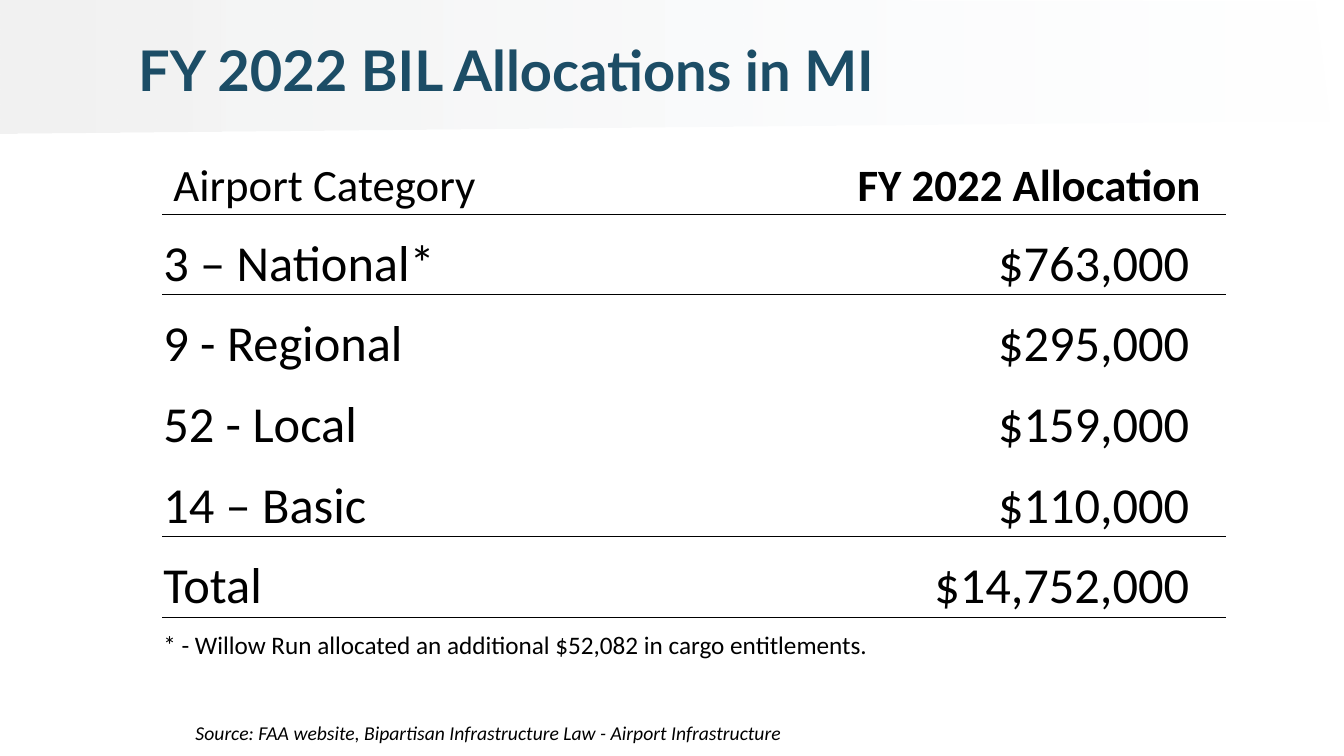
from lxml import etree
from pptx import Presentation
from pptx.dml.color import RGBColor
from pptx.enum.text import MSO_ANCHOR, MSO_AUTO_SIZE, PP_ALIGN
from pptx.oxml.ns import qn
from pptx.util import Emu, Inches, Pt

BOTTOM, MIDDLE = MSO_ANCHOR.BOTTOM, MSO_ANCHOR.MIDDLE
LEFT, RIGHT = PP_ALIGN.LEFT, PP_ALIGN.RIGHT
FIT_SHAPE = MSO_AUTO_SIZE.SHAPE_TO_FIT_TEXT

WIDTH, HEIGHT = 13.33, 7.5
HEADING_FONT, BODY_FONT = "Lato", "Calibri"
TEAL, BLACK = "1C4D66", "000000"
BAND_LEFT, BAND_RIGHT = "F2F2F2", "F7FAFD"
NO_STYLE = "{2D5ABB26-0587-4C30-8999-92F81FD0307C}"

COLUMNS = [5.03, 5.28, 0.15]
ROWS = [0.44] + [0.8] * 5 + [0.44]
HEADINGS = ("\u00a0Airport Category", "FY 2022 Allocation")
ALLOCATIONS = [
    ("3 – National*", " $763,000 "),
    ("9 - Regional", " $295,000 "),
    ("52 - Local", " $159,000 "),
    ("14 – Basic", " $110,000 "),
    ("Total", " $14,752,000 "),
]
FOOTNOTE = "* - Willow Run allocated an additional $52,082 in cargo entitlements."
SOURCE = "Source: FAA website, Bipartisan Infrastructure Law - Airport Infrastructure"
RULES_BELOW = (0, 4)


def color(value):
    return RGBColor.from_string(value)


def box(left, top, width, height):
    return [Inches(length) for length in (left, top, width, height)]


def write(frame, text, size, font=BODY_FONT, ink=BLACK, bold=False,
          italic=False, align=LEFT):
    paragraph = frame.paragraphs[0]
    paragraph.alignment = align
    run = paragraph.add_run()
    run.text = text
    run.font.name, run.font.size = font, Pt(size)
    run.font.bold, run.font.italic = bold, italic
    run.font.color.rgb = color(ink)
    return paragraph


def add_band(slide):
    outline = [(13.04, 0.02), (6.18, 0), (0, 0), (0, 1.32), (13.19, 1.19)]
    points = [(Inches(x), Inches(y)) for x, y in outline]
    builder = slide.shapes.build_freeform(*points[0])
    builder.add_line_segments(points[1:], close=True)
    band = builder.convert_to_shape()
    band.shadow.inherit = False
    band.line.fill.background()
    band.fill.gradient()
    band.fill.gradient_angle = 0
    for stop, value in zip(band.fill.gradient_stops, (BAND_LEFT, BAND_RIGHT)):
        stop.color.rgb = color(value)
    # The right end fades to almost clear
    fading = list(band._element.spPr.iter(qn("a:srgbClr")))[-1]
    etree.SubElement(fading, qn("a:alpha"), val="4000")
    # Behind the title
    slide.shapes._spTree.insert(2, band._element)


def add_title(slide, text):
    title = slide.shapes.title
    title.left, title.top, title.width, title.height = box(1.27, 0.4, 11.17, 0.65)
    title.text_frame.vertical_anchor = MIDDLE
    title.text_frame.word_wrap = True
    paragraph = write(title.text_frame, text, 40, HEADING_FONT, TEAL, bold=True)
    paragraph.line_spacing = 0.9


def rule(cell, side):
    line = etree.Element(qn(f"a:ln{side}"), w=str(Pt(0.5)))
    fill = etree.SubElement(line, qn("a:solidFill"))
    etree.SubElement(fill, qn("a:srgbClr"), val=BLACK)
    cell._tc.get_or_add_tcPr().insert(0, line)


def fill_cell(cell, text, size, **style):
    cell.vertical_anchor = BOTTOM
    cell.margin_left = cell.margin_right = cell.margin_top = Inches(0.01)
    cell.margin_bottom = Emu(0)
    write(cell.text_frame, text, size, **style)


def add_allocations(slide):
    frame = slide.shapes.add_table(len(ROWS), len(COLUMNS),
                                   *box(1.61, 1.57, sum(COLUMNS), sum(ROWS)))
    table = frame.table
    table.first_row = table.horz_banding = False
    table._tbl.tblPr.find(qn("a:tableStyleId")).text = NO_STYLE
    for column, width in zip(table.columns, COLUMNS):
        column.width = Inches(width)
    for row, height in zip(table.rows, ROWS):
        row.height = Inches(height)
    for cell in table.iter_cells():
        cell.fill.background()

    # Headings, airport categories and total
    for r, (category, amount) in enumerate([HEADINGS] + ALLOCATIONS):
        size = 36 if r else 32
        fill_cell(table.cell(r, 0), category, size)
        fill_cell(table.cell(r, 1), amount, size, bold=r == 0, align=RIGHT)

    # Footnote across both text columns
    table.cell(6, 0).merge(table.cell(6, 1))
    fill_cell(table.cell(6, 0), FOOTNOTE, 18)

    # Thin rules under the headings and above the total
    for r in RULES_BELOW:
        for c in range(len(COLUMNS)):
            rule(table.cell(r, c), "B")
            rule(table.cell(r + 1, c), "T")


def add_source(slide):
    frame = slide.shapes.add_textbox(*box(1.84, 7.1, 6.12, 0.34)).text_frame
    frame.word_wrap = False
    frame.auto_size = FIT_SHAPE
    write(frame, SOURCE, 14, italic=True)


def main():
    deck = Presentation()
    deck.slide_width, deck.slide_height = Inches(WIDTH), Inches(HEIGHT)
    slide = deck.slides.add_slide(deck.slide_layouts[5])
    add_band(slide)
    add_allocations(slide)
    add_title(slide, "FY 2022 BIL Allocations in MI")
    add_source(slide)
    deck.save("out.pptx")


if __name__ == "__main__":
    main()
